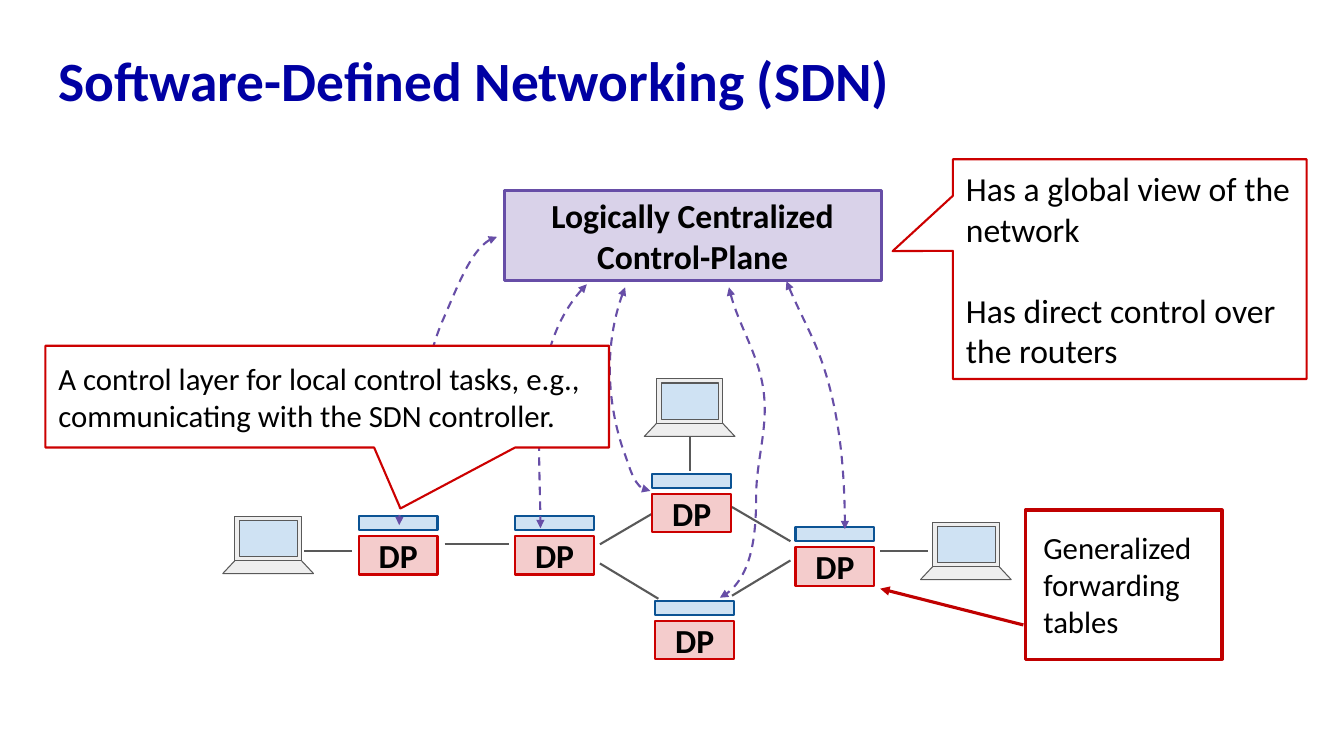
from pptx import Presentation
from pptx.dml.color import RGBColor
from pptx.enum.dml import MSO_LINE
from pptx.enum.shapes import MSO_CONNECTOR, MSO_SHAPE
from pptx.enum.text import MSO_ANCHOR, PP_ALIGN
from pptx.oxml.ns import qn
from pptx.util import Inches, Pt
from lxml import etree

RECT = MSO_SHAPE.RECTANGLE
TRI = MSO_SHAPE.ISOSCELES_TRIANGLE
CALL = MSO_SHAPE.ROUNDED_RECTANGULAR_CALLOUT
STRAIGHT = MSO_CONNECTOR.STRAIGHT
MIDDLE, TOP = MSO_ANCHOR.MIDDLE, MSO_ANCHOR.TOP
LEFT, CENTER = PP_ALIGN.LEFT, PP_ALIGN.CENTER
DASH = MSO_LINE.DASH

FONT = "Calibri"
COLORS = {
    "title": "0000A3", "text": "000000", "white": "FFFFFF", "wire": "595959",
    "case": "EEEEEE", "blue": "CFE2F3", "navy": "0B5394", "pink": "F4CCCC",
    "red": "CC0000", "dark": "C00000", "lilac": "D9D2E9", "purple": "674EA7",
}

# Content
TITLE = "Software-Defined Networking (SDN)"
PLANE = "Logically Centralized Control-Plane"
VIEW = ["Has a global view of the network", "Has direct control over the routers"]
LAYER = ["A control layer for local control tasks, e.g., "
         "communicating with the SDN controller."]
TABLES = "Generalized forwarding tables"

# Left and top of each laptop and router
LAPTOPS = [(2.21, 5.12), (6.39, 3.76), (9.13, 5.18)]
ROUTERS = [(3.56, 5.12), (5.11, 5.12), (6.47, 4.7), (7.89, 5.23), (6.5, 5.96)]
# Parts of a laptop: shape, offset and size, fill
PARTS = [(TRI, (0, 0.09, 0.9, 0.48), "case"),
         (RECT, (0.12, 0, 0.66, 0.44), "case"),
         (RECT, (0.17, 0.04, 0.57, 0.36), "blue")]
# Start and end of each link
WIRES = [(4.41, 5.4, 5.05, 5.4), (5.95, 5.4, 6.53, 5.06),
         (6.53, 5.94, 5.95, 5.59), (7.84, 5.37, 7.26, 5.03),
         (7.26, 5.91, 7.84, 5.56), (3.02, 5.47, 3.49, 5.47),
         (6.84, 4.33, 6.84, 4.67), (8.73, 5.47, 9.2, 5.47)]
# Control channels: a start, then three points per Bezier segment
CURVES = [
    [(4.93, 2.35), (4.7, 2.4), (4.54, 2.84), (4.4, 3.16), (4.26, 3.47),
     (4.2, 3.86), (4.12, 4.22), (4.05, 4.54), (3.96, 4.87), (3.96, 5.21)],
    [(5.82, 2.82), (5.24, 3.4), (5.36, 4.42), (5.36, 5.24)],
    [(6.2, 2.85), (6, 3.34), (6.01, 3.95), (6.18, 4.46),
     (6.24, 4.61), (6.29, 4.87), (6.45, 4.87)],
    [(7.23, 2.85), (7.31, 3.22), (7.55, 3.56), (7.58, 3.94), (7.61, 4.27),
     (7.5, 4.59), (7.5, 4.92), (7.5, 5.28), (7.46, 5.77), (7.14, 5.93)],
    [(7.8, 2.79), (7.88, 2.99), (7.98, 3.18), (8.07, 3.38),
     (8.31, 3.93), (8.38, 4.61), (8.38, 5.25)],
]

prs = Presentation()
prs.slide_width, prs.slide_height = Inches(13.33), Inches(7.5)
slide = prs.slides.add_slide(prs.slide_layouts[6])
shapes = slide.shapes


def rgb(name):
    return RGBColor.from_string(COLORS[name])


def stroke(item, color, width):
    item.line.color.rgb = rgb(color)
    item.line.width = Pt(width)


def arrow(item, *ends):
    for end in ends:
        etree.SubElement(item.line._get_or_add_ln(), qn("a:" + end), type="triangle")


def write(shape, lines, size, color="text", bold=False, align=LEFT,
          anchor=MIDDLE, inset=(0.13, 0.13), gap=0):
    frame = shape.text_frame
    frame.word_wrap = True
    frame.vertical_anchor = anchor
    frame.margin_left = frame.margin_right = Inches(inset[0])
    frame.margin_top = frame.margin_bottom = Inches(inset[1])
    frame.text = "\n".join(lines)
    for i, para in enumerate(frame.paragraphs):
        para.alignment = align
        para.space_before = Pt(gap if i else 0)
        font = para.font
        font.name, font.size, font.bold = FONT, Pt(size), bold
        font.color.rgb = rgb(color)
    return frame


def draw(kind, box, fill, line, width):
    shape = shapes.add_shape(kind, *map(Inches, box))
    shape.shadow.inherit = False
    if fill:
        shape.fill.solid()
        shape.fill.fore_color.rgb = rgb(fill)
    else:
        shape.fill.background()
    stroke(shape, line, width)
    return shape


def link(ends, color, width):
    item = shapes.add_connector(STRAIGHT, *map(Inches, ends))
    stroke(item, color, width)
    etree.SubElement(item._element.spPr, qn("a:effectLst"))
    return item


def curve(points):
    start, *rest = [(Inches(x), Inches(y)) for x, y in points]
    build = shapes.build_freeform(*start)
    build.add_line_segments(rest, close=False)
    shape = build.convert_to_shape()
    # Join every three straight steps into one Bezier segment
    steps = list(shape._element.iter(qn("a:lnTo")))
    for i in range(0, len(steps), 3):
        bend = etree.Element(qn("a:cubicBezTo"))
        steps[i].addprevious(bend)
        for step in steps[i:i + 3]:
            bend.append(step[0])
            step.getparent().remove(step)
    shape.shadow.inherit = False
    shape.fill.background()
    stroke(shape, "purple", 1.5)
    shape.line.dash_style = DASH
    arrow(shape, "headEnd", "tailEnd")


def callout(box, tip, lines, size, gap=0):
    shape = draw(CALL, box, "white", "red", 1.5)
    for i, value in enumerate((*tip, 0)):
        shape.adjustments[i] = value
    write(shape, lines, size, gap=gap)


# Title
head = shapes.add_textbox(*map(Inches, (0.45, 0.41, 12.42, 0.84)))
write(head, [TITLE], 39.6, "title", True).paragraphs[0].line_spacing = 0.9

# Network
for ends in WIRES:
    link(ends, "wire", 1.5)
for x, y in LAPTOPS:
    for kind, (dx, dy, w, h), fill in PARTS:
        draw(kind, (x + dx, y + dy, w, h), fill, "wire", 0.75)
for x, y in ROUTERS:
    plane = draw(RECT, (x, y + 0.2, 0.78, 0.38), "pink", "red", 1.5)
    write(plane, ["DP"], 24, bold=True, align=CENTER)
    draw(RECT, (x, y, 0.78, 0.14), "blue", "navy", 1.5)

# Controller and its channels
plane = draw(RECT, (5, 1.89, 3.74, 0.89), "lilac", "purple", 2.25)
write(plane, [PLANE], 24, bold=True, align=CENTER)
callout((9.45, 1.58, 3.51, 2.18), (-0.67, -0.082), VIEW, 24, gap=29)
for points in CURVES:
    curve(points)
callout((0.45, 3.43, 5.59, 1.01), (0.13, 1.099), LAYER, 22)

# Forwarding tables note
draw(RECT, (10.17, 5.06, 1.95, 1.48), None, "dark", 2.25)
note = shapes.add_textbox(*map(Inches, (10.25, 5.2, 1.77, 1.21)))
write(note, [TABLES], 22, anchor=TOP, inset=(0.1, 0.05))
arrow(link((10.15, 6.2, 8.73, 5.84), "dark", 2.25), "tailEnd")

prs.save("out.pptx")
